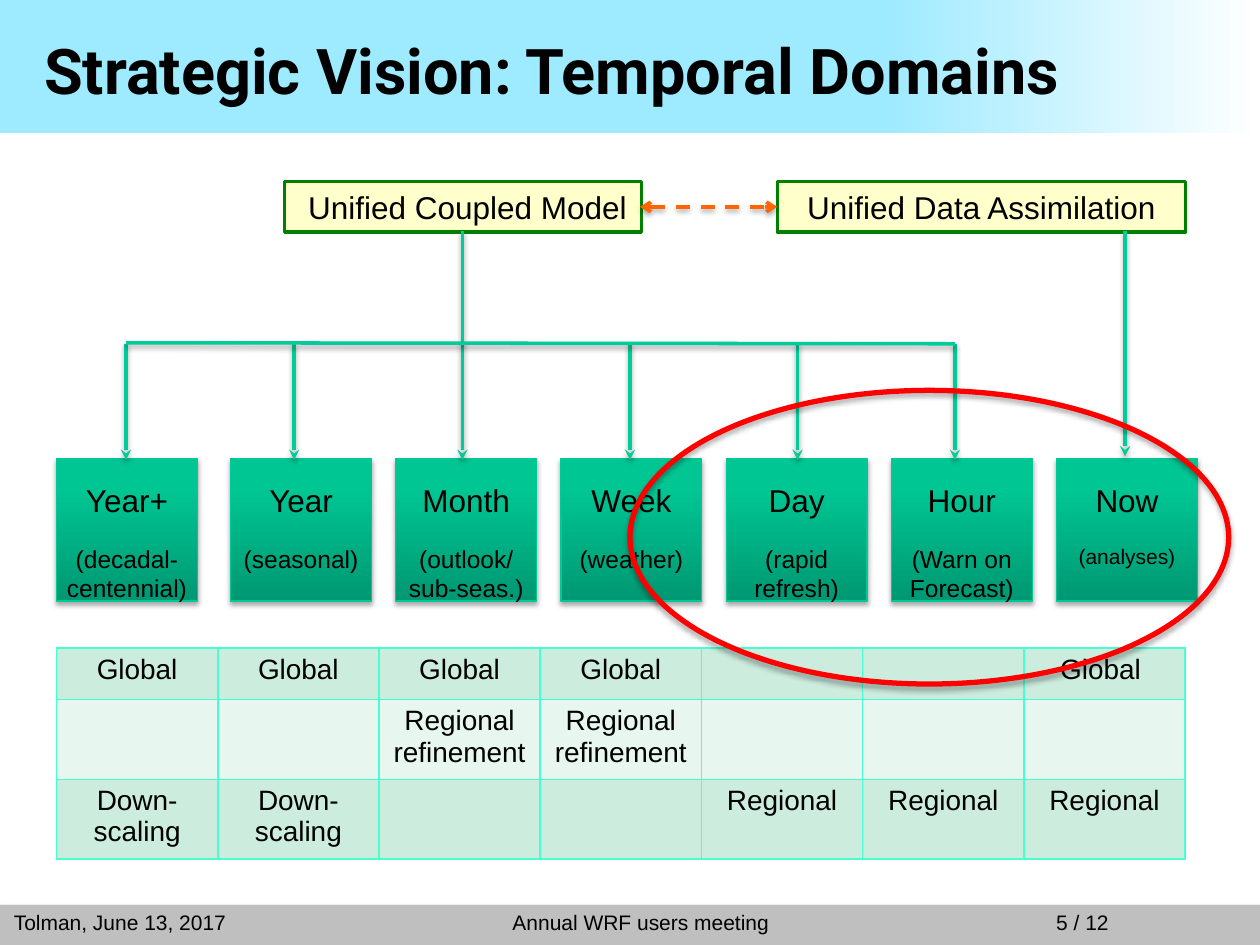
import copy
import lxml.etree
import pptx
import pptx.util
import pptx.dml.color
import pptx.enum.dml
import pptx.enum.shapes
import pptx.enum.text
import pptx.oxml
import pptx.oxml.ns

Cm = pptx.util.Cm
Pt = pptx.util.Pt
RGBColor = pptx.dml.color.RGBColor
KIND = pptx.enum.shapes.MSO_SHAPE
ALIGN = pptx.enum.text.PP_ALIGN
ANCHOR = pptx.enum.text.MSO_ANCHOR
qn = pptx.oxml.ns.qn

BLACK = RGBColor(0x00, 0x00, 0x00)
WHITE = RGBColor(0xFF, 0xFF, 0xFF)
GRAY = RGBColor(0xBF, 0xBF, 0xBF)
SKY = RGBColor(0x9E, 0xEA, 0xFF)
CREAM = RGBColor(0xFF, 0xFF, 0xCC)
GREEN = RGBColor(0x00, 0x80, 0x00)
DEEP = RGBColor(0x00, 0x98, 0x72)
JADE = RGBColor(0x00, 0xC6, 0x94)
LIGHT = RGBColor(0x00, 0xC7, 0x95)
EDGE = RGBColor(0x00, 0xC8, 0x96)
TEAL = RGBColor(0x00, 0xCC, 0x99)
ORANGE = RGBColor(0xFF, 0x66, 0x00)
RED = RGBColor(0xFF, 0x00, 0x00)
MINT = RGBColor(0xCC, 0xEC, 0xDE)
PALE = RGBColor(0xE7, 0xF6, 0xEF)
AQUA = RGBColor(0x47, 0xFF, 0xD1)

deck = pptx.Presentation()
deck.slide_width = Cm(25.4)
deck.slide_height = Cm(19.05)
slide = deck.slides.add_slide(deck.slide_layouts[6])
shapes = slide.shapes


def draw(kind, place, fill=None, angle=0, line=None, width=1):
    shape = shapes.add_shape(kind, *map(Cm, place))
    shape.shadow.inherit = False
    if isinstance(fill, list):
        shape.fill.gradient()
        shape.fill.gradient_angle = angle
        first = next(shape._element.spPr.iter(qn("a:gs")))
        first.addnext(copy.deepcopy(first))
        for stop, (spot, color) in zip(shape.fill.gradient_stops, fill):
            stop.position = spot
            stop.color.rgb = color
    elif fill is not None:
        shape.fill.solid()
        shape.fill.fore_color.rgb = fill
    else:
        shape.fill.background()
    if line is not None:
        shape.line.color.rgb = line
        shape.line.width = Pt(width)
    else:
        shape.line.fill.background()
    return shape


def write(frame, lines, align, anchor=ANCHOR.TOP, font="Arial", bold=False):
    frame.word_wrap = True
    frame.vertical_anchor = anchor
    frame.text = "\n".join(text for text, size in lines)
    for para, (text, size) in zip(frame.paragraphs, lines):
        para.alignment = align
        para.font.name = font
        para.font.size = Pt(size)
        para.font.bold = bold
        para.font.color.rgb = BLACK


foot = draw(KIND.RECTANGLE, (0, 18.24, 25.4, 0.81), GRAY)
for left, text, align in [
    (0.03, "Tolman, June 13, 2017", ALIGN.LEFT),
    (8.5, "5 / 12", ALIGN.RIGHT),
    (5.87, "Annual WRF users meeting", ALIGN.CENTER),
]:
    note = shapes.add_textbox(Cm(left), Cm(18.21), Cm(14.1), Cm(0.76))
    write(note.text_frame, [(text, 12)], align, ANCHOR.BOTTOM)

draw(KIND.RECTANGLE, (0, 0, 25.4, 2.69), [(0, SKY), (0.7, SKY), (1, WHITE)])
title = shapes.add_textbox(Cm(0.64), Cm(0.41), Cm(24.13), Cm(1.98))
write(title.text_frame, [("Strategic Vision: Temporal Domains", 36)],
      ALIGN.LEFT, ANCHOR.MIDDLE, "Roboto", True)

for left, wide, text, inset in [
    (5.74, 7.19, "Unified Coupled Model", 0.43),
    (15.67, 8.23, "Unified Data Assimilation", 0.25),
]:
    head = draw(KIND.RECTANGLE, (left, 3.66, wide, 1.02), CREAM, line=GREEN, width=2)
    write(head.text_frame, [(text, 18)], ALIGN.CENTER)
    head.text_frame.margin_left = Cm(inset)

cast = [foot]
spans = [
    ("Year+", ["(decadal- centennial)"], 14),
    ("Year", ["(seasonal)"], 14),
    ("Month", ["(outlook/", "sub-seas.)"], 14),
    ("Week", ["(weather)"], 14),
    ("Day", ["(rapid refresh)"], 14),
    ("Hour", ["(Warn on Forecast)"], 14),
    ("Now", ["(analyses)"], 12),
]
for i, (name, notes, size) in enumerate(spans):
    left = 1.32 + 3.33 * i if i else 1.14
    cast.append(draw(KIND.RECTANGLE, (left, 9.25, 2.84, 2.87),
                     [(0, DEEP), (0.8, JADE), (1, LIGHT)], 90, EDGE, 0.75))
    extra = 0 if i else 0.17
    label = shapes.add_textbox(Cm(left - extra), Cm(9.58), Cm(2.84 + 2 * extra), Cm(2.4))
    write(label.text_frame, [(name, 18)] + [(note, size) for note in notes], ALIGN.CENTER)
    label.text_frame.paragraphs[1].space_before = Pt(14)

drops = [(x, 6.93, x, 9.27) for x in (2.54, 5.93, 9.32, 12.7, 16.08, 19.25)]
links = [(*drop, TEAL, "stealth") for drop in drops]
links += [
    (22.68, 4.65, 22.68, 9.2, TEAL, "stealth"),
    (9.32, 4.65, 9.32, 6.91, TEAL, None),
    (2.54, 6.91, 19.25, 6.93, TEAL, None),
    (12.9, 4.17, 15.67, 4.17, ORANGE, "arrow"),
]
for x, y, right, low, color, tip in links:
    link = shapes.add_connector(pptx.enum.shapes.MSO_CONNECTOR.STRAIGHT,
                                Cm(x), Cm(y), Cm(right), Cm(low))
    link.line.color.rgb = color
    link.line.width = Pt(2)
    ends = ["a:tailEnd"] if tip else []
    if tip == "arrow":
        link.line.dash_style = pptx.enum.dml.MSO_LINE.DASH
        ends = ["a:headEnd", "a:tailEnd"]
    for end in ends:
        lxml.etree.SubElement(link.line._ln, qn(end), type=tip)
    lxml.etree.SubElement(link._element.spPr, qn("a:effectLst"))
    cast.append(link)

rows = [
    ["Global"] * 4 + ["", "", "Global "],
    ["", "", "Regional refinement", "Regional refinement", "", "", ""],
    ["Down-scaling"] * 2 + ["", ""] + ["Regional"] * 3,
]
table = shapes.add_table(3, 7, Cm(1.14), Cm(13.06), Cm(22.75), Cm(4.26)).table
table.first_row = False
table.horz_banding = False
for col in table.columns:
    col.width = Cm(3.25)
for r, (row, high, color) in enumerate(zip(rows, (1.04, 1.61, 1.61), (MINT, PALE, MINT))):
    table.rows[r].height = Cm(high)
    for c, text in enumerate(row):
        cell = table.cell(r, c)
        write(cell.text_frame, [(text, 16)], ALIGN.CENTER)
        props = cell._tc.get_or_add_tcPr()
        for side in ("a:lnL", "a:lnR", "a:lnT", "a:lnB"):
            edge = lxml.etree.SubElement(props, qn(side), w=str(Pt(1)))
            solid = lxml.etree.SubElement(edge, qn("a:solidFill"))
            lxml.etree.SubElement(solid, qn("a:srgbClr"), val=str(AQUA))
        cell.fill.solid()
        cell.fill.fore_color.rgb = color

cast.append(draw(KIND.OVAL, (12.7, 7.87, 12.07, 5.92), line=RED, width=3))

for item in cast:
    glow = item._element.spPr.find(qn("a:effectLst"))
    shade = lxml.etree.SubElement(glow, qn("a:outerShdw"), blurRad=str(Pt(3.1)),
                                  dist=str(Pt(1.8)), dir="5400000", rotWithShape="0")
    tint = lxml.etree.SubElement(shade, qn("a:srgbClr"), val=str(BLACK))
    lxml.etree.SubElement(tint, qn("a:alpha"), val="35000")

deck.save("out.pptx")
